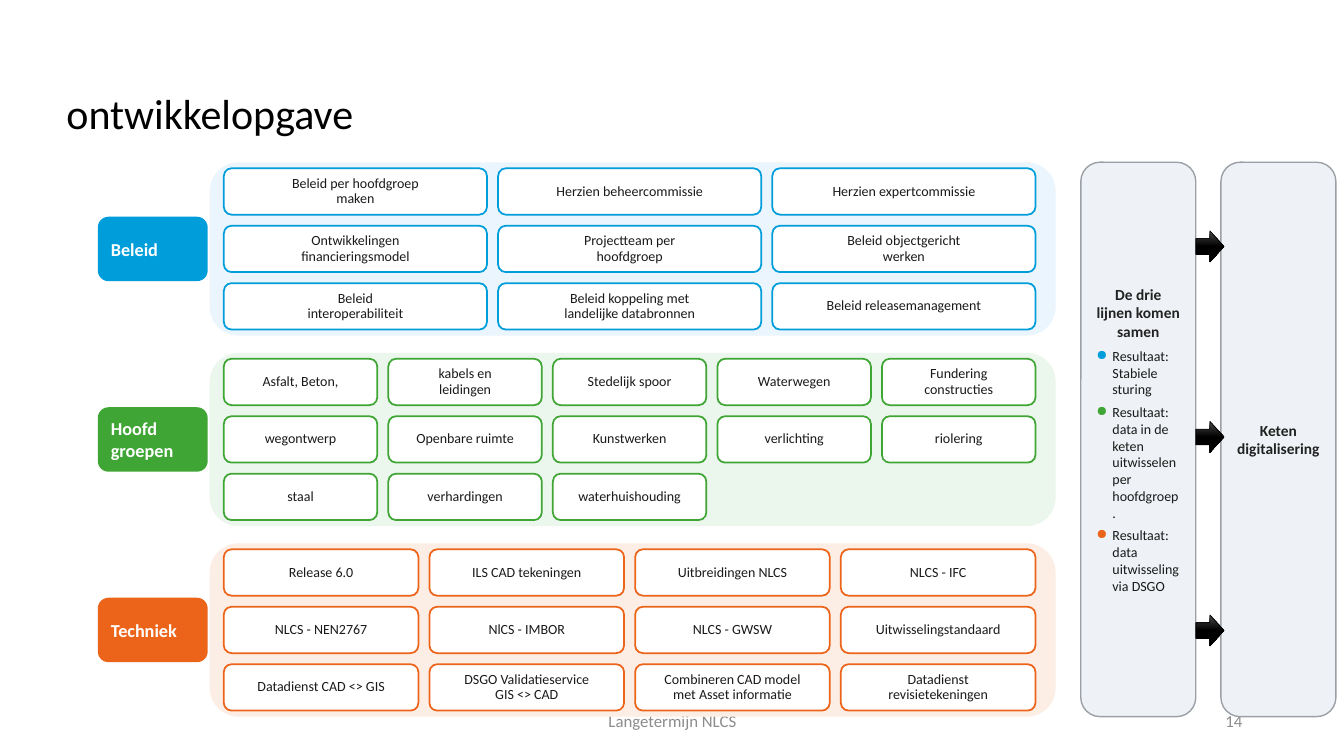
from dataclasses import dataclass

from lxml.etree import SubElement
from pptx import Presentation
from pptx.dml.color import RGBColor
from pptx.enum.shapes import MSO_SHAPE as Preset
from pptx.enum.text import MSO_ANCHOR as Anchor, PP_ALIGN as Align
from pptx.oxml.ns import qn
from pptx.shapes.autoshape import Shape
from pptx.slide import Slide
from pptx.text.text import TextFrame, _Paragraph as Paragraph
from pptx.util import Inches, Pt

FONT = "Calibri"
BLACK = RGBColor(0x00, 0x00, 0x00)
WHITE = RGBColor(0xFF, 0xFF, 0xFF)
INK = RGBColor(0x1A, 0x1A, 0x1A)
HEADING = RGBColor(0x22, 0x22, 0x22)
FOOTER_GRAY = RGBColor(0x8C, 0x8C, 0x8C)
BLUE = RGBColor(0x00, 0x9D, 0xDB)
PALE_BLUE = RGBColor(0xEA, 0xF5, 0xFD)
GREEN = RGBColor(0x3F, 0xA5, 0x34)
PALE_GREEN = RGBColor(0xEB, 0xF6, 0xEC)
ORANGE = RGBColor(0xEC, 0x64, 0x1A)
PALE_ORANGE = RGBColor(0xFD, 0xEE, 0xE5)
COLUMN_FILL = RGBColor(0xEE, 0xF2, 0xF6)
COLUMN_LINE = RGBColor(0x9A, 0xA0, 0xA6)
ARROW_SHINE = RGBColor(0x4B, 0x4B, 0x4B)

BAND_TOP, BAND_PITCH, BAND_HEIGHT = 1.61, 1.89, 1.72
GRID_LEFT, GRID_WIDTH, CELL_HEIGHT, GAP = 2.22, 8.05, 0.46, 0.11
COLUMN_WIDTH, COLUMN_HEIGHT = 1.14, 5.5


@dataclass
class Band:
    label: str
    color: RGBColor
    pale: RGBColor
    rows: list[list[str]]


@dataclass
class Result:
    text: str
    bullet: RGBColor


BANDS = [
    Band("Beleid", BLUE, PALE_BLUE, [
        ["Beleid per hoofdgroep\nmaken", "Herzien beheercommissie", "Herzien expertcommissie"],
        ["Ontwikkelingen\nfinancieringsmodel", "Projectteam per\nhoofdgroep",
         "Beleid objectgericht\nwerken"],
        ["Beleid\ninteroperabiliteit", "Beleid koppeling met\nlandelijke databronnen",
         "Beleid releasemanagement"],
    ]),
    Band("Hoofd groepen", GREEN, PALE_GREEN, [
        ["Asfalt, Beton,", "kabels en\nleidingen", "Stedelijk spoor", "Waterwegen",
         "Fundering\nconstructies"],
        ["wegontwerp", "Openbare ruimte", "Kunstwerken", "verlichting", "riolering"],
        ["staal", "verhardingen", "waterhuishouding"],
    ]),
    Band("Techniek", ORANGE, PALE_ORANGE, [
        ["Release 6.0", "ILS CAD tekeningen", "Uitbreidingen NLCS", "NLCS - IFC"],
        ["NLCS - NEN2767", "NlCS - IMBOR", "NLCS - GWSW", "Uitwisselingstandaard"],
        ["Datadienst CAD <> GIS", "DSGO Validatieservice\nGIS <> CAD",
         "Combineren CAD model\nmet Asset informatie", "Datadienst\nrevisietekeningen"],
    ]),
]
RESULTS = [
    Result("Resultaat: Stabiele sturing", BLUE),
    Result("Resultaat: data in de keten uitwisselen per hoofdgroep.", GREEN),
    Result("Resultaat: data uitwisseling via DSGO", ORANGE),
]
ARROW_TOPS = [4.18, 2.29, 6.1]


def add_span(para: Paragraph, text: str, size: float, color: RGBColor, bold: bool = False) -> None:
    span = para.add_run()
    span.text = text
    span.font.name = FONT
    span.font.size = Pt(size)
    span.font.bold = bold
    span.font.color.rgb = color


def prepare_frame(frame: TextFrame) -> Paragraph:
    frame.word_wrap = True
    frame.vertical_anchor = Anchor.MIDDLE
    return frame.paragraphs[0]


def add_text(page: Slide, left: float, top: float, width: float, height: float,
             text: str, size: float, color: RGBColor, align: Align) -> Paragraph:
    box = page.shapes.add_textbox(Inches(left), Inches(top), Inches(width), Inches(height))
    para = prepare_frame(box.text_frame)
    para.alignment = align
    add_span(para, text, size, color)
    return para


def add_rounded(page: Slide, left: float, top: float, width: float, height: float,
                fill: RGBColor, line: RGBColor | None = None, weight: float = 1) -> Shape:
    box = page.shapes.add_shape(Preset.ROUNDED_RECTANGLE, Inches(left), Inches(top),
                                Inches(width), Inches(height))
    box.shadow.inherit = False
    box.fill.solid()
    box.fill.fore_color.rgb = fill
    if line is None:
        box.line.fill.background()
    else:
        box.line.color.rgb = line
        box.line.width = Pt(weight)
    return box


def add_cell(page: Slide, left: float, top: float, width: float, text: str,
             color: RGBColor) -> None:
    box = add_rounded(page, left, top, width, CELL_HEIGHT, WHITE, color, 1.25)
    frame = box.text_frame
    para = prepare_frame(frame)
    frame.margin_top = frame.margin_bottom = 0
    for number, line in enumerate(text.split("\n")):
        if number:
            para = frame.add_paragraph()
        para.alignment = Align.CENTER
        para.line_spacing = 0.9
        add_span(para, line, 10, INK)


def add_band(page: Slide, band: Band, top: float) -> None:
    add_rounded(page, 2.08, top, 8.39, BAND_HEIGHT, band.pale)
    label = add_rounded(page, 0.97, top + 0.54, 1.09, 0.64, band.color)
    para = prepare_frame(label.text_frame)
    para.alignment = Align.LEFT
    add_span(para, band.label, 13, WHITE, bold=True)
    count = len(band.rows[0])
    width = (GRID_WIDTH - GAP * (count - 1)) / count
    for row, texts in enumerate(band.rows):
        for column, text in enumerate(texts):
            add_cell(page, GRID_LEFT + column * (width + GAP),
                     top + 0.06 + row * (CELL_HEIGHT + GAP), width, text, band.color)


def add_column(page: Slide, left: float, heading: str, results: list[Result]) -> None:
    box = add_rounded(page, left, BAND_TOP, COLUMN_WIDTH, COLUMN_HEIGHT, COLUMN_FILL, COLUMN_LINE)
    para = prepare_frame(box.text_frame)
    para.alignment = Align.CENTER
    para.space_after = Pt(5)
    add_span(para, heading, 11, HEADING, bold=True)
    for result in results:
        para = box.text_frame.add_paragraph()
        para.alignment = Align.LEFT
        para.space_after = Pt(4)
        add_bullet(para, result.bullet)
        add_span(para, result.text, 10, INK)


def add_bullet(para: Paragraph, color: RGBColor) -> None:
    properties = para._p.get_or_add_pPr()
    properties.set("marL", str(Inches(0.16)))
    properties.set("indent", str(-Inches(0.16)))
    tint = SubElement(properties, qn("a:buClr"))
    SubElement(tint, qn("a:srgbClr")).set("val", str(color))
    SubElement(properties, qn("a:buChar")).set("char", "●")


def add_arrow(page: Slide, top: float) -> None:
    arrow = page.shapes.add_shape(Preset.RIGHT_ARROW, Inches(11.86), Inches(top),
                                  Inches(0.28), Inches(0.31))
    arrow.shadow.inherit = False
    arrow.fill.gradient()
    arrow.fill.gradient_angle = 270
    stops = arrow.fill.gradient_stops
    for stop, position, color in zip(stops, (0, 0.5), (ARROW_SHINE, BLACK)):
        stop.position = position
        stop.color.rgb = color
    arrow.line.color.rgb = BLACK
    arrow.line.width = Pt(0.5)


def main() -> None:
    deck = Presentation()
    deck.slide_width, deck.slide_height = Inches(13.33), Inches(7.5)
    page = deck.slides.add_slide(deck.slide_layouts[6])
    title = add_text(page, 0.56, 0.83, 12.22, 0.64, "ontwikkelopgave", 30, BLACK, Align.LEFT)
    title.line_spacing = 0.9
    footer = add_text(page, 4.42, 6.95, 4.5, 0.4, "Langetermijn NLCS", 12, FOOTER_GRAY,
                      Align.CENTER)
    footer.space_after = Pt(6)
    add_text(page, 9.42, 6.95, 3, 0.4, "14", 12, FOOTER_GRAY, Align.RIGHT)
    for number, band in enumerate(BANDS):
        add_band(page, band, BAND_TOP + number * BAND_PITCH)
    add_column(page, 10.72, "De drie lijnen komen samen", RESULTS)
    add_column(page, 12.11, "Keten digitalisering", [])
    for top in ARROW_TOPS:
        add_arrow(page, top)
    deck.save("out.pptx")


if __name__ == "__main__":
    main()
